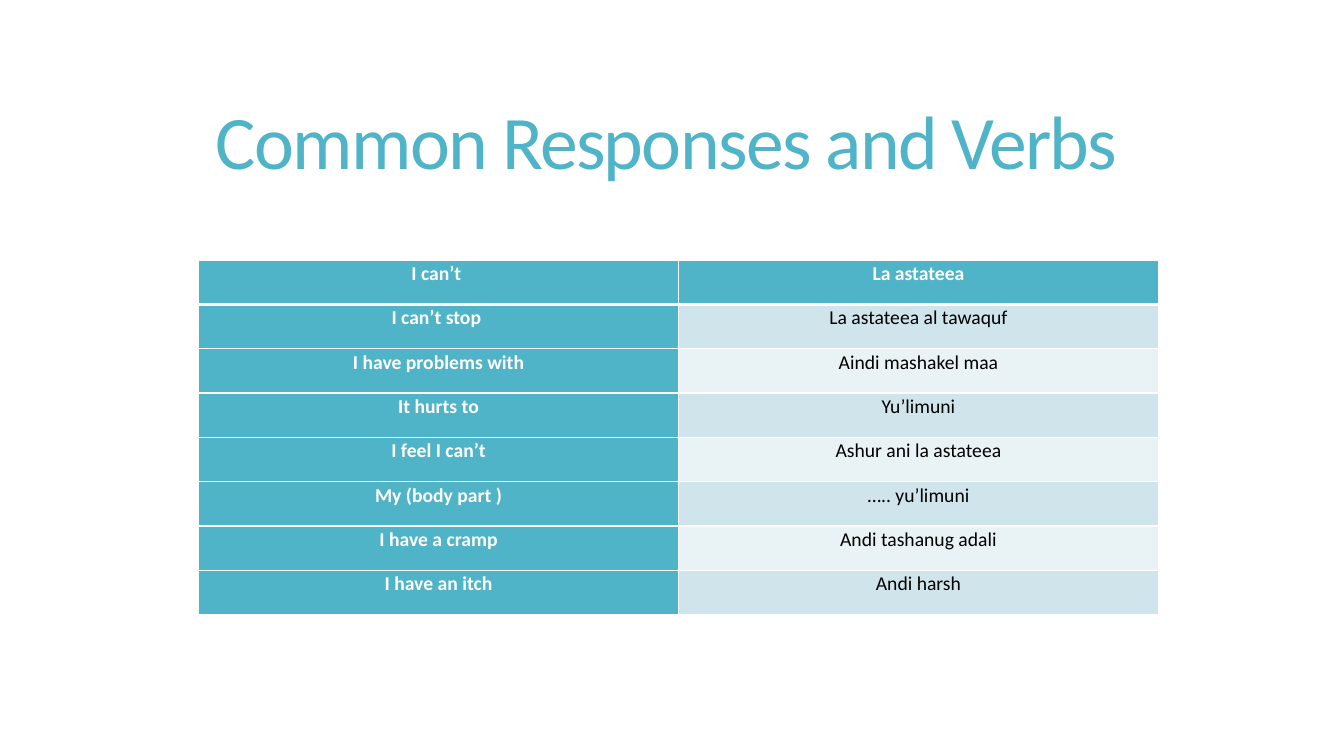
from dataclasses import dataclass

from lxml import etree
from pptx import Presentation
from pptx import util as u
from pptx.dml.color import RGBColor
from pptx.enum import text
from pptx.oxml.ns import qn

PX = 9144
FONT = "Calibri"
HUES = {
    "teal": "50B4C8",
    "band": "D0E5EB",
    "pale": "E9F2F5",
    "white": "FFFFFF",
    "black": "000000",
}


@dataclass
class Phrase:
    english: str
    arabic: str


PHRASES = [
    Phrase("I can’t ", "La astateea"),
    Phrase("I can’t stop ", "La astateea al tawaquf"),
    Phrase("I have problems with", "Aindi mashakel maa"),
    Phrase("It hurts to", "Yu’limuni"),
    Phrase("I feel I can’t", "Ashur ani la astateea"),
    Phrase("My (body part )", "….. yu’limuni"),
    Phrase("I have a cramp", "Andi tashanug adali"),
    Phrase("I have an itch", "Andi harsh"),
]


def px(count: int) -> u.Emu:
    return u.Emu(count * PX)


def style(para, size: int, hue: str, bold: bool, lead: float) -> None:
    para.alignment = text.PP_ALIGN.CENTER
    para.line_spacing = lead
    para.space_before = para.space_after = u.Pt(0)
    para.font.name = FONT
    para.font.size = u.Pt(size)
    para.font.bold = bold
    para.font.color.rgb = RGBColor.from_string(HUES[hue])


def border(cell, side: str, points: int) -> None:
    props = cell._tc.get_or_add_tcPr()
    line = etree.SubElement(props, qn(f"a:ln{side}"), w=str(u.Pt(points)))
    fill = etree.SubElement(line, qn("a:solidFill"))
    etree.SubElement(fill, qn("a:srgbClr"), val=HUES["white"])


def draw_title(slide) -> None:
    title = slide.shapes.title
    title.left, title.top, title.width, title.height = map(px, (72, 55, 1178, 181))
    frame = title.text_frame
    frame.text = "Common Responses and Verbs"
    frame.word_wrap = True
    frame.auto_size = text.MSO_AUTO_SIZE.NONE
    frame.vertical_anchor = text.MSO_ANCHOR.MIDDLE
    para = frame.paragraphs[0]
    style(para, 54, "teal", False, 0.85)
    para.runs[0].font._element.set("spc", "-120")


def draw_cell(cell, words: str, row: int, col: int) -> None:
    head = row == 0 or col == 0
    cell.text = words
    cell.margin_left = cell.margin_right = px(7)
    cell.margin_top = cell.margin_bottom = 0
    cell.vertical_anchor = text.MSO_ANCHOR.TOP
    style(cell.text_frame.paragraphs[0], 14, "white" if head else "black", head, 1.07)
    for side in "LRTB":
        thick = (row, side) in ((0, "B"), (1, "T"))
        border(cell, side, 3 if thick else 1)
    hue = "teal" if head else "band" if row % 2 else "pale"
    cell.fill.solid()
    cell.fill.fore_color.rgb = RGBColor.from_string(HUES[hue])


def draw_table(slide) -> None:
    count = len(PHRASES)
    frame = slide.shapes.add_table(count, 2, px(197), px(258), px(952), px(44 * count))
    for row, phrase in enumerate(PHRASES):
        for col, words in enumerate((phrase.english, phrase.arabic)):
            draw_cell(frame.table.cell(row, col), words, row, col)


def main() -> None:
    deck = Presentation()
    deck.slide_width, deck.slide_height = px(1333), px(750)
    slide = deck.slides.add_slide(deck.slide_layouts[5])
    draw_title(slide)
    draw_table(slide)
    deck.save("out.pptx")


if __name__ == "__main__":
    main()
